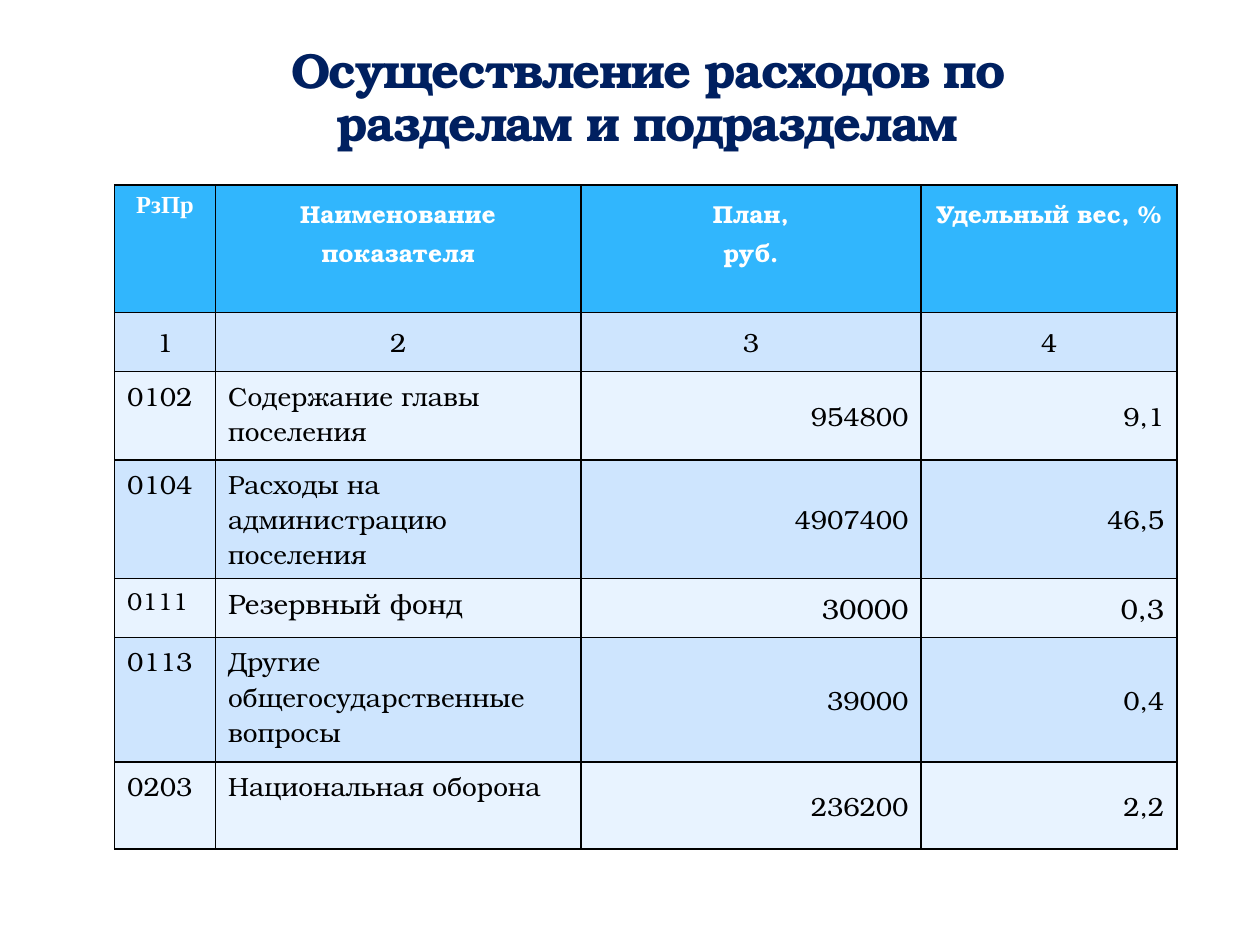
from dataclasses import dataclass

from lxml.etree import SubElement
from pptx import Presentation
from pptx.dml.color import RGBColor
from pptx.enum.text import MSO_ANCHOR as Anchor, PP_ALIGN as Align
from pptx.oxml.ns import qn
from pptx.util import Inches, Pt

# Content
TITLE = "Осуществление расходов по разделам и подразделам"
HEADER = ["РзПр", "Наименование показателя", "План,\nруб.", "Удельный вес, %"]
NUMBERS = ["1", "2", "3", "4"]
EXPENSES = [
    ("0102", "Содержание главы поселения", "954800", "9,1"),
    ("0104", "Расходы на администрацию поселения", "4907400", "46,5"),
    ("0111", "Резервный фонд", "30000", "0,3"),
    ("0113", "Другие общегосударственные вопросы", "39000", "0,4"),
    ("0203", "Национальная оборона", "236200", "2,2"),
]
SPECIAL_SIZES = {"0111": 14, "Резервный фонд": 16, "30000": 16, "0,3": 16}

# Layout in inches
TITLE_BOX = (1.3, 0.76, 7.68, 0.5)
TABLE_CORNER = (0.91, 1.47)
COLUMN_WIDTHS = [0.8, 2.9, 2.7, 2.03]
ROW_HEIGHTS = [1.01, 0.47, 0.7, 0.7, 0.47, 0.99, 0.69]


@dataclass(frozen=True)
class Theme:
    font: str = "TeX Gyre Bonum"
    code_font: str = "Times New Roman"
    title_size: int = 28
    header_size: int = 14
    body_size: int = 15
    title: str = "002060"
    outline: str = "AFCCDE"
    header_text: str = "FFFFFF"
    text: str = "000000"
    border: str = "000000"
    header_fill: str = "31B6FD"
    bands: tuple = ("CEE5FE", "E8F3FF")


THEME = Theme()


def write(frame, text, color, align, spacing=1.0, **font_format):
    """Fill a text frame, one paragraph per line of text."""
    for index, line in enumerate(text.split("\n")):
        paragraph = frame.paragraphs[0] if index == 0 else frame.add_paragraph()
        paragraph.alignment = align
        paragraph.line_spacing = spacing
        run = paragraph.add_run()
        run.text = line
        run.font.color.rgb = RGBColor.from_string(color)
        for name, value in font_format.items():
            setattr(run.font, name, value)


def add_solid_line(parent, tag, color, width, alpha=None):
    line = SubElement(parent, qn(tag), w=str(Pt(width)))
    fill = SubElement(line, qn("a:solidFill"))
    rgb = SubElement(fill, qn("a:srgbClr"), val=color)
    if alpha is not None:
        SubElement(rgb, qn("a:alpha"), val=str(alpha * 1000))
    return line


def add_borders(cell):
    properties = cell._tc.get_or_add_tcPr()
    for position, side in enumerate("LRTB"):
        line = add_solid_line(properties, f"a:ln{side}", THEME.border, 1)
        properties.remove(line)
        properties.insert(position, line)


def cell_format(row, column, text):
    """Return the fill, anchor and text format for a table position."""
    if row == 0:
        is_code = column == 0
        return THEME.header_fill, Anchor.TOP, {
            "color": THEME.header_text, "align": Align.CENTER, "bold": True,
            "name": THEME.code_font if is_code else THEME.font,
            "size": Pt(THEME.header_size), "spacing": 1.0 if is_code else 1.1,
        }
    is_label = row > 1 and column < 2
    if row == 1:
        align = Align.CENTER
    else:
        align = Align.LEFT if is_label else Align.RIGHT
    return THEME.bands[(row - 1) % 2], Anchor.TOP if is_label else Anchor.MIDDLE, {
        "color": THEME.text, "align": align, "bold": False, "name": THEME.font,
        "size": Pt(SPECIAL_SIZES.get(text, THEME.body_size)),
    }


def add_title(slide):
    frame = slide.shapes.add_textbox(*map(Inches, TITLE_BOX)).text_frame
    frame.word_wrap = True
    frame.vertical_anchor = Anchor.BOTTOM
    write(frame, TITLE, THEME.title, Align.CENTER, 0.9,
          name=THEME.font, size=Pt(THEME.title_size), bold=True)
    # Tight letter spacing and a faint outline
    properties = frame.paragraphs[0].runs[0].font._element
    properties.set("spc", "-100")
    outline = add_solid_line(properties, "a:ln", THEME.outline, 0.25, alpha=25)
    properties.remove(outline)
    properties.insert(0, outline)


def add_expense_table(slide):
    rows = [HEADER, NUMBERS, *EXPENSES]
    size = (sum(COLUMN_WIDTHS), sum(ROW_HEIGHTS))
    table = slide.shapes.add_table(
        len(rows), len(HEADER), *map(Inches, TABLE_CORNER + size)).table
    for column, width in zip(table.columns, COLUMN_WIDTHS):
        column.width = Inches(width)
    for row, height in zip(table.rows, ROW_HEIGHTS):
        row.height = Inches(height)
    for row_index, texts in enumerate(rows):
        for column_index, text in enumerate(texts):
            cell = table.cell(row_index, column_index)
            fill, anchor, text_format = cell_format(row_index, column_index, text)
            cell.fill.solid()
            cell.fill.fore_color.rgb = RGBColor.from_string(fill)
            cell.vertical_anchor = anchor
            write(cell.text_frame, text, **text_format)
            add_borders(cell)


def main():
    presentation = Presentation()
    presentation.slide_width, presentation.slide_height = Inches(10), Inches(7.5)
    slide = presentation.slides.add_slide(presentation.slide_layouts[6])
    add_expense_table(slide)
    add_title(slide)
    presentation.save("out.pptx")


if __name__ == "__main__":
    main()
